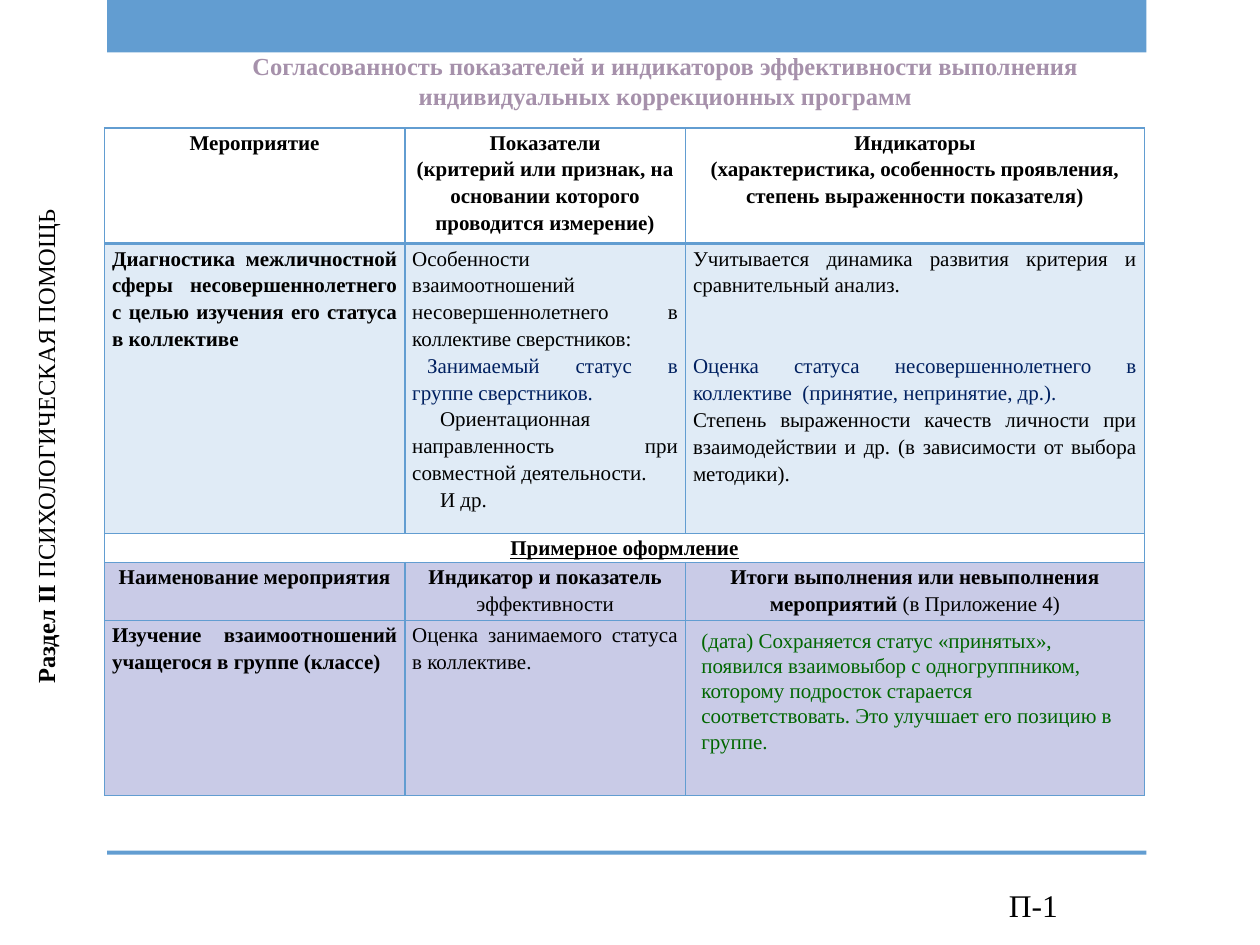
"""Builds a slide with a table of indicators for correction programmes."""
import pptx
import pptx.util
import pptx.dml.color
import pptx.enum.text
import pptx.enum.shapes
import pptx.oxml
import pptx.oxml.ns

Cm, Pt = pptx.util.Cm, pptx.util.Pt
ALIGN = pptx.enum.text.PP_ALIGN
FONT = "Times New Roman"
BLUE, PALE, LILAC, WHITE = "629DD1", "E0EBF6", "C9CBE7", "FFFFFF"
BLACK, NAVY, GREEN, MAUVE = "000000", "002060", "006600", "A691AB"


def para(*runs, ink=BLACK, dent=0, gap=0):
    return {"runs": runs, "ink": ink, "dent": dent, "gap": gap}


TITLE = [
    para(("Согласованность показателей и индикаторов эффективности выполнения", "b"), ink=MAUVE),
    para(("индивидуальных коррекционных программ", "b"), ink=MAUVE),
]
SIDE = [para(("Раздел II", "b"), (" ПСИХОЛОГИЧЕСКАЯ ПОМОЩЬ", ""))]
NOTE = [para(("(дата) Сохраняется статус «принятых», появился взаимовыбор с одногруппником, "
              "которому подросток старается соответствовать. Это улучшает его позицию в группе.", ""),
             ink=GREEN)]
PAGE = [para(("П-1", ""))]

COLS = [6.05, 5.66, 9.25 + 0.45 - 0.45]
ROWS = [
    (2.32, WHITE, ALIGN.CENTER, [
        [para(("Мероприятие", "b"))],
        [para(("Показатели", "b")),
         para(("(критерий или признак, на основании которого проводится измерение)", "b"))],
        [para(("Индикаторы", "b")),
         para(("(характеристика, особенность проявления, степень выраженности показателя)", "b"))],
    ]),
    (5.84, PALE, ALIGN.JUSTIFY, [
        [para(("Диагностика межличностной сферы несовершеннолетнего с целью изучения "
               "его статуса в коллективе", "b"))],
        [para(("Особенности взаимоотношений несовершеннолетнего в коллективе сверстников:", "")),
         para(("Занимаемый статус в группе сверстников.", ""), ink=NAVY, dent=0.3),
         para(("Ориентационная направленность при совместной деятельности.", ""), dent=0.56),
         para(("И др.", ""), dent=0.56)],
        [para(("Учитывается динамика развития критерия и сравнительный анализ.", "")),
         para(("Оценка статуса несовершеннолетнего в коллективе  (принятие, непринятие, др.).", ""),
              ink=NAVY, gap=31),
         para(("Степень выраженности качеств личности при взаимодействии и др. "
               "(в зависимости от выбора методики).", ""))],
    ]),
    (0.58, WHITE, ALIGN.CENTER, [[para(("Примерное оформление", "bu"))]]),
    (1.17, LILAC, ALIGN.CENTER, [
        [para(("Наименование мероприятия", "b"))],
        [para(("Индикатор и показатель ", "b"), ("эффективности", ""))],
        [para(("Итоги выполнения или невыполнения мероприятий ", "b"), ("(в Приложение 4)", ""))],
    ]),
    (3.52, LILAC, ALIGN.JUSTIFY, [
        [para(("Изучение взаимоотношений учащегося в группе (классе)", "b"))],
        [para(("Оценка занимаемого статуса в коллективе.", ""))],
        [],
    ]),
]


def tint(part, ink):
    part.rgb = pptx.dml.color.RGBColor.from_string(ink)


def write(frame, paras, size, align=ALIGN.LEFT, lead=None):
    for i, item in enumerate(paras):
        par = frame.paragraphs[0] if i == 0 else frame.add_paragraph()
        par.alignment = align
        par.space_before = Pt(item["gap"])
        if lead:
            par.line_spacing = lead
        if item["dent"]:
            props = par._p.get_or_add_pPr()
            props.set("marL", "0")
            props.set("indent", str(Cm(item["dent"])))
        for text, style in item["runs"]:
            run = par.add_run()
            run.text = text
            run.font.name = FONT
            run.font.size = Pt(size)
            run.font.bold = "b" in style
            run.font.underline = "u" in style
            tint(run.font.color, item["ink"])


def box(slide, spot, paras, size):
    shape = slide.shapes.add_textbox(*map(Cm, spot))
    shape.text_frame.word_wrap = True
    write(shape.text_frame, paras, size)
    return shape


def bar(slide, top, high):
    shape = slide.shapes.add_shape(pptx.enum.shapes.MSO_SHAPE.RECTANGLE,
                                   Cm(2.16), Cm(top), Cm(20.95), Cm(high))
    shape.shadow.inherit = False
    shape.fill.solid()
    tint(shape.fill.fore_color, BLUE)
    shape.line.fill.background()


def edge(cell, sides):
    props = cell._tc.get_or_add_tcPr()
    for i, (side, wide) in enumerate(sides.items()):
        props.insert(i, pptx.oxml.parse_xml(
            f'<a:ln{side} {pptx.oxml.ns.nsdecls("a")} w="{Pt(wide)}"><a:solidFill>'
            f'<a:srgbClr val="{BLUE}"/></a:solidFill></a:ln{side}>'))


def grid(slide):
    high = sum(row[0] for row in ROWS)
    table = slide.shapes.add_table(len(ROWS), len(COLS), Cm(2.11), Cm(2.58),
                                   Cm(sum(COLS)), Cm(high)).table
    table.first_row = table.horz_banding = False
    for col, wide in zip(table.columns, COLS):
        col.width = Cm(wide)
    for r, (high, back, align, cells) in enumerate(ROWS):
        table.rows[r].height = Cm(high)
        if len(cells) == 1:
            table.cell(r, 0).merge(table.cell(r, len(COLS) - 1))
        for c in range(len(COLS)):
            cell = table.cell(r, c)
            cell.margin_left = cell.margin_right = Cm(0.15)
            cell.margin_top = cell.margin_bottom = 0
            cell.fill.solid()
            tint(cell.fill.fore_color, back)
            edge(cell, {"L": 1, "R": 1, "T": 2 if r == 1 else 1, "B": 2 if r == 0 else 1})
            if c < len(cells):
                write(cell.text_frame, cells[c], 12, align, 1.15)


def main():
    deck = pptx.Presentation()
    deck.slide_width, deck.slide_height = Cm(25.4), Cm(19.05)
    slide = deck.slides.add_slide(deck.slide_layouts[5])
    bar(slide, 0, 1.06)
    bar(slide, 17.15, 0.08)
    box(slide, (-4.32, 8.36, 10.49, 0.86), SIDE, 14).rotation = 270
    grid(slide)
    head = slide.shapes.title
    head.left, head.top, head.width, head.height = map(Cm, (2.11, 0.91, 22.61, 1.45))
    head.text_frame.auto_size = pptx.enum.text.MSO_AUTO_SIZE.NONE
    head.text_frame.vertical_anchor = pptx.enum.text.MSO_ANCHOR.TOP
    write(head.text_frame, TITLE, 14, ALIGN.CENTER)
    box(slide, (13.89, 12.52, 8.99, 3.33), NOTE, 12)
    box(slide, (20.09, 17.73, 1.6, 1.02), PAGE, 18)
    deck.save("out.pptx")


if __name__ == "__main__":
    main()
